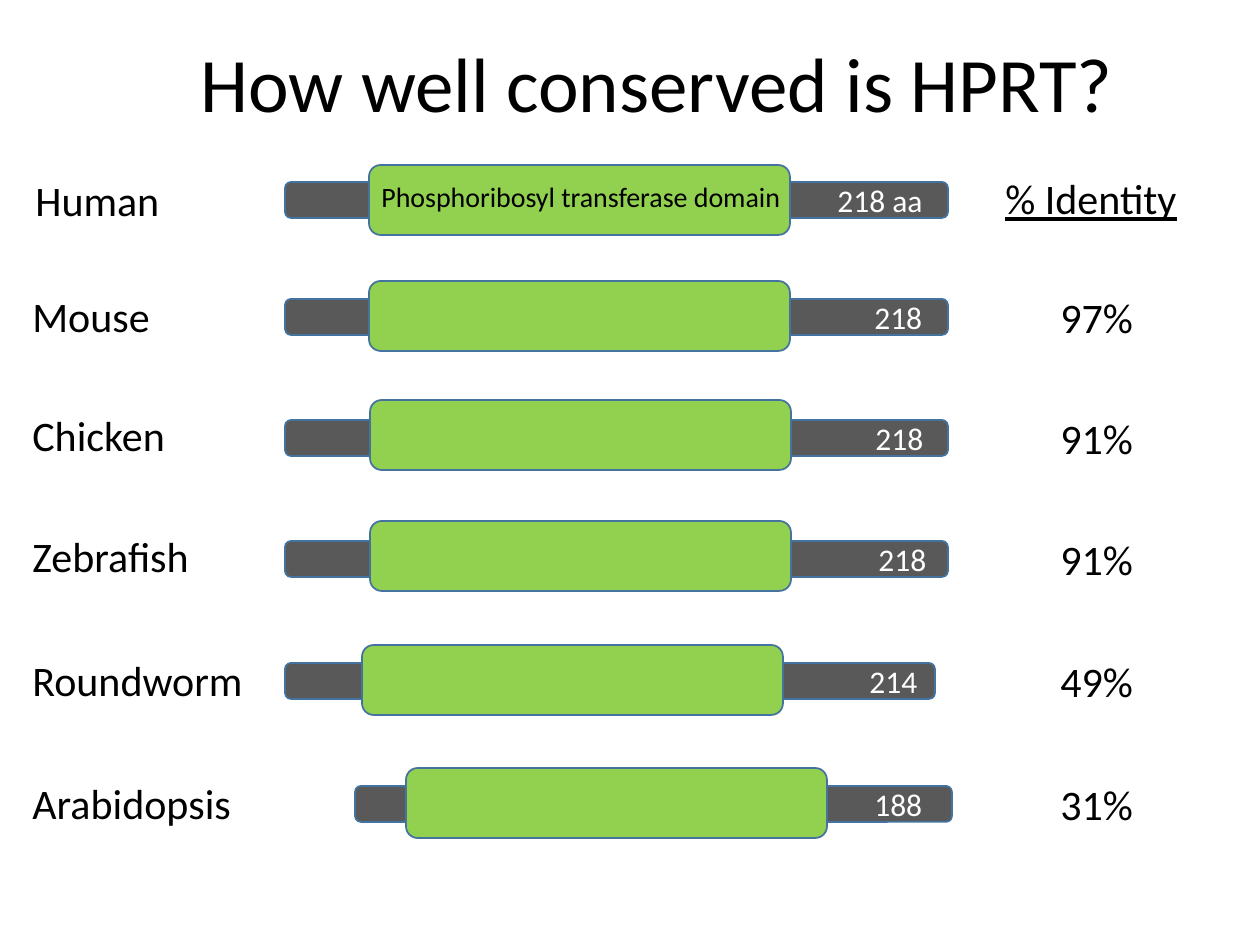
from pptx import Presentation
from pptx.dml.color import RGBColor
from pptx.enum.shapes import MSO_SHAPE
from pptx.enum.text import MSO_ANCHOR, MSO_AUTO_SIZE, PP_ALIGN
from pptx.util import Emu, Pt

PX = 914400 // 126
ROUNDED = MSO_SHAPE.ROUNDED_RECTANGLE
TOP = MSO_ANCHOR.TOP
LEFT = PP_ALIGN.LEFT
FIT_SHAPE = MSO_AUTO_SIZE.SHAPE_TO_FIT_TEXT

BLACK = RGBColor(0, 0, 0)
WHITE = RGBColor(255, 255, 255)
GRAY = RGBColor(0x59, 0x59, 0x59)
GREEN = RGBColor(0x92, 0xD0, 0x50)
BLUE = RGBColor(0x43, 0x73, 0x9E)

FONT = "Calibri"
BAR_HEIGHT = 36
DOMAIN_WIDTH, DOMAIN_HEIGHT = 421, 70
TEXT_HEIGHTS = {16: 47, 18: 50, 24: 63, 44: 106}

TITLE = "How well conserved is HPRT?"
DOMAIN_NAME = "Phosphoribosyl transferase domain"
IDENTITY_HEADING = "% Identity"

# Each protein: name (text, left, width), bar (left, width, middle),
# domain (left, middle), length (text, left), identity
PROTEINS = [
    (("Human", 23, 165), (285, 663, 200), (369, 200), ("218 aa", 825), None),
    (("Mouse", 20, 165), (285, 663, 317), (369, 316), ("218", 862), "97%"),
    (("Chicken", 20, 165), (285, 663, 438), (370, 435), ("218", 863), "91%"),
    (("Zebrafish", 20, 197), (285, 663, 559), (370, 556), ("218", 866), "91%"),
    (("Roundworm", 20, 267), (285, 650, 681), (362, 680), ("214", 857), "49%"),
    (("Arabidopsis", 20, 262), (355, 597, 804), (406, 803), ("188", 862), "31%"),
]


def px(value):
    return Emu(round(value * PX))


def add_block(slide, left, middle, width, height, color):
    shape = slide.shapes.add_shape(
        ROUNDED, px(left), px(middle - height / 2), px(width), px(height))
    shape.shadow.inherit = False
    shape.fill.solid()
    shape.fill.fore_color.rgb = color
    shape.line.color.rgb = BLUE
    shape.line.width = Pt(1)


def add_text(slide, text, left, middle, width, size=24, color=BLACK, underline=None):
    height = TEXT_HEIGHTS[size]
    box = slide.shapes.add_textbox(
        px(left), px(middle - height / 2), px(width), px(height))
    frame = box.text_frame
    frame.word_wrap = True
    frame.auto_size = FIT_SHAPE
    frame.vertical_anchor = TOP
    paragraph = frame.paragraphs[0]
    paragraph.alignment = LEFT
    run = paragraph.add_run()
    run.text = text
    run.font.name = FONT
    run.font.size = Pt(size)
    run.font.color.rgb = color
    run.font.underline = underline


def add_protein(slide, name, bar, domain, length, identity):
    name_text, name_left, name_width = name
    bar_left, bar_width, bar_middle = bar
    domain_left, domain_middle = domain
    length_text, length_left = length
    add_block(slide, bar_left, bar_middle, bar_width, BAR_HEIGHT, GRAY)
    add_block(slide, domain_left, domain_middle, DOMAIN_WIDTH, DOMAIN_HEIGHT, GREEN)
    add_text(slide, name_text, name_left, domain_middle, name_width)
    add_text(slide, length_text, length_left, bar_middle, 155, 18, WHITE)
    if identity:
        add_text(slide, identity, 1048, bar_middle, 112)


def main():
    presentation = Presentation()
    presentation.slide_width = px(1260)
    presentation.slide_height = px(945)
    slide = presentation.slides.add_slide(presentation.slide_layouts[6])
    add_text(slide, TITLE, 188, 82, 989, 44)
    for protein in PROTEINS:
        add_protein(slide, *protein)
    add_text(slide, DOMAIN_NAME, 369, 197, 436, 16)
    add_text(slide, IDENTITY_HEADING, 993, 198, 223, underline=True)
    presentation.save("out.pptx")


if __name__ == "__main__":
    main()
